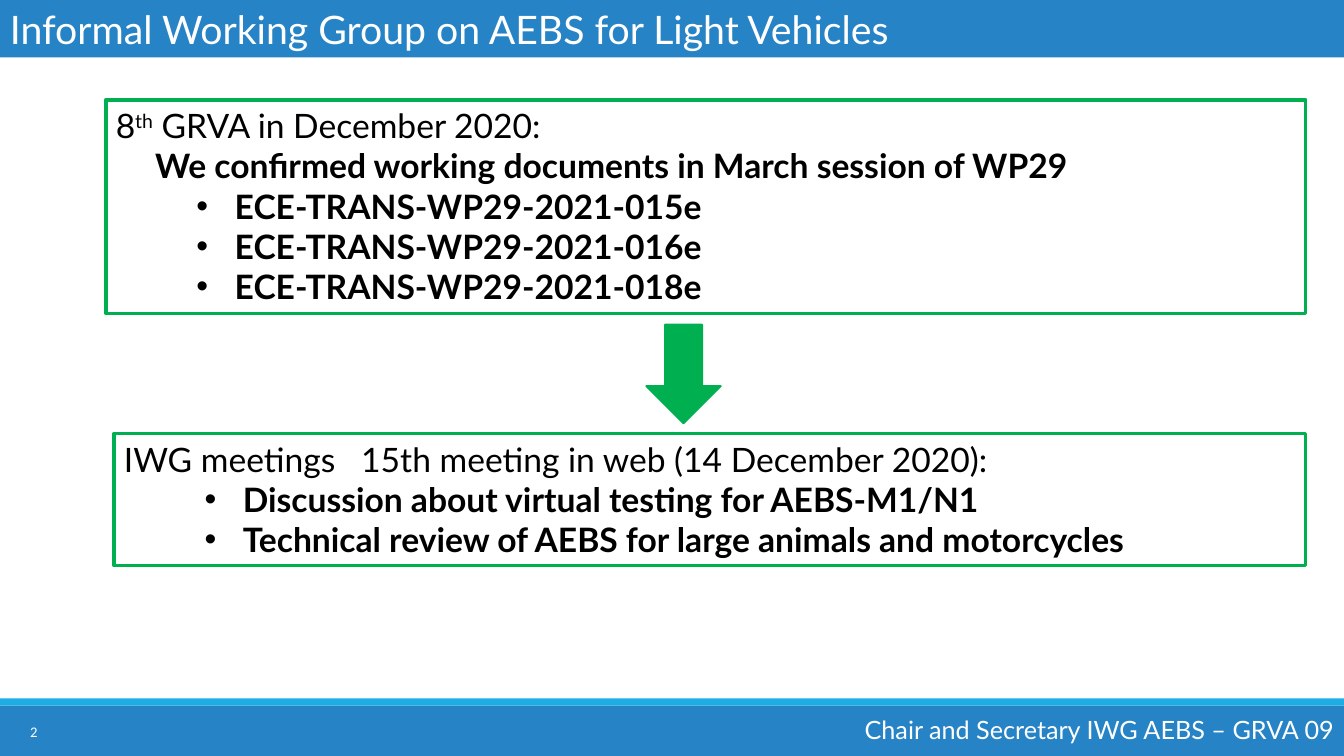
from dataclasses import dataclass

import lxml.etree
import pptx
import pptx.dml.color
import pptx.enum.shapes
import pptx.enum.text
import pptx.oxml.ns
import pptx.presentation
import pptx.shapes.autoshape
import pptx.slide
import pptx.text.text
import pptx.util

Inches = pptx.util.Inches
Align = pptx.enum.text.PP_ALIGN
Anchor = pptx.enum.text.MSO_ANCHOR
Preset = pptx.enum.shapes.MSO_SHAPE

BLUE, CYAN, GREEN = "2683C6", "1CADE4", "00B050"
WHITE, BLACK = "FFFFFF", "000000"
SLIDE_WIDTH, SLIDE_HEIGHT = 13.33, 7.5


@dataclass(frozen=True)
class Area:
    left: float
    top: float
    width: float
    height: float

    def lengths(self) -> list[pptx.util.Length]:
        return [Inches(value) for value in (self.left, self.top, self.width, self.height)]


@dataclass(frozen=True)
class Run:
    text: str
    bold: bool = False
    superscript: bool = False


@dataclass(frozen=True)
class Line:
    runs: tuple[Run, ...]
    margin: float = 0
    bullet: bool = False


@dataclass(frozen=True)
class Style:
    size: float
    color: str
    font: str = "Lato"
    align: Align = Align.LEFT
    anchor: Anchor = Anchor.TOP


@dataclass(frozen=True)
class Box:
    area: Area
    lines: tuple[Line, ...]


def rgb(color: str) -> pptx.dml.color.RGBColor:
    return pptx.dml.color.RGBColor.from_string(color)


def plain(text: str) -> Line:
    return Line((Run(text),))


def bullet(text: str) -> Line:
    return Line((Run(text, bold=True),), margin=1.18, bullet=True)


def add_bullet(paragraph: pptx.text.text._Paragraph) -> None:
    properties = paragraph._p.get_or_add_pPr()
    properties.set("indent", str(Inches(-0.38)))
    qn = pptx.oxml.ns.qn
    lxml.etree.SubElement(properties, qn("a:buFont")).set("typeface", "Arial")
    lxml.etree.SubElement(properties, qn("a:buChar")).set("char", "•")


def write(frame: pptx.text.text.TextFrame, lines: tuple[Line, ...], style: Style) -> None:
    frame.word_wrap = True
    frame.vertical_anchor = style.anchor
    for index, line in enumerate(lines):
        paragraph = frame.add_paragraph() if index else frame.paragraphs[0]
        paragraph.alignment = style.align
        if line.margin:
            paragraph._p.get_or_add_pPr().set("marL", str(Inches(line.margin)))
        if line.bullet:
            add_bullet(paragraph)
        for part in line.runs:
            run = paragraph.add_run()
            run.text = part.text
            run.font.name = style.font
            run.font.size = pptx.util.Pt(style.size)
            run.font.bold = part.bold
            run.font.color.rgb = rgb(style.color)
            if part.superscript:
                run._r.get_or_add_rPr().set("baseline", "30000")


def add_shape(slide: pptx.slide.Slide, area: Area, fill: str = "", outline: str = "",
              width: float = 0, preset: Preset = Preset.RECTANGLE) -> pptx.shapes.autoshape.Shape:
    shape = slide.shapes.add_shape(preset, *area.lengths())
    shape.shadow.inherit = False
    if fill:
        shape.fill.solid()
        shape.fill.fore_color.rgb = rgb(fill)
    else:
        shape.fill.background()
    if outline:
        shape.line.color.rgb = rgb(outline)
        shape.line.width = pptx.util.Pt(width)
    else:
        shape.line.fill.background()
    return shape


def add_text(slide: pptx.slide.Slide, area: Area, text: str, style: Style) -> None:
    write(slide.shapes.add_textbox(*area.lengths()).text_frame, (plain(text),), style)


BOXES = (
    Box(Area(1.05, 0.99, 11.9, 2.12), (
        Line((Run("8"), Run("th", superscript=True), Run(" GRVA in December 2020:"))),
        Line((Run("We confirmed working documents in March session of WP29", bold=True),), margin=0.39),
        *(bullet(f"ECE-TRANS-WP29-2021-{number}e") for number in ("015", "016", "018")),
    )),
    Box(Area(1.13, 4.3, 11.82, 1.31), (
        plain("IWG meetings   15th meeting in web (14 December 2020):"),
        bullet("Discussion about virtual testing for AEBS-M1/N1"),
        bullet("Technical review of AEBS for large animals and motorcycles"),
    )),
)


def main() -> None:
    presentation = pptx.Presentation()
    presentation.slide_width = Inches(SLIDE_WIDTH)
    presentation.slide_height = Inches(SLIDE_HEIGHT)
    slide = presentation.slides.add_slide(presentation.slide_layouts[6])

    # Footer bands, slide number and footer text
    add_shape(slide, Area(0, 7, SLIDE_WIDTH, 0.5), fill=BLUE)
    add_shape(slide, Area(0, 6.93, SLIDE_WIDTH, 0.07), fill=CYAN)
    add_text(slide, Area(0, 7.06, 0.47, 0.4), "2",
             Style(10.5, WHITE, font="Calibri", align=Align.RIGHT, anchor=Anchor.MIDDLE))
    add_text(slide, Area(8.42, 7.04, 4.91, 0.4), "Chair and Secretary IWG AEBS – GRVA 09",
             Style(18, WHITE, align=Align.RIGHT))

    # Title bar
    title = add_shape(slide, Area(0, 0, SLIDE_WIDTH, 0.57), fill=BLUE)
    write(title.text_frame, (plain("Informal Working Group on AEBS for Light Vehicles"),), Style(28, WHITE))

    # Outlined boxes and the arrow between them
    for box in BOXES:
        shape = add_shape(slide, box.area, outline=GREEN, width=2.5)
        write(shape.text_frame, box.lines, Style(24, BLACK))
    add_shape(slide, Area(6.41, 3.22, 0.74, 0.98), fill=GREEN, outline=GREEN, width=1.25,
              preset=Preset.DOWN_ARROW)

    presentation.save("out.pptx")


if __name__ == "__main__":
    main()
